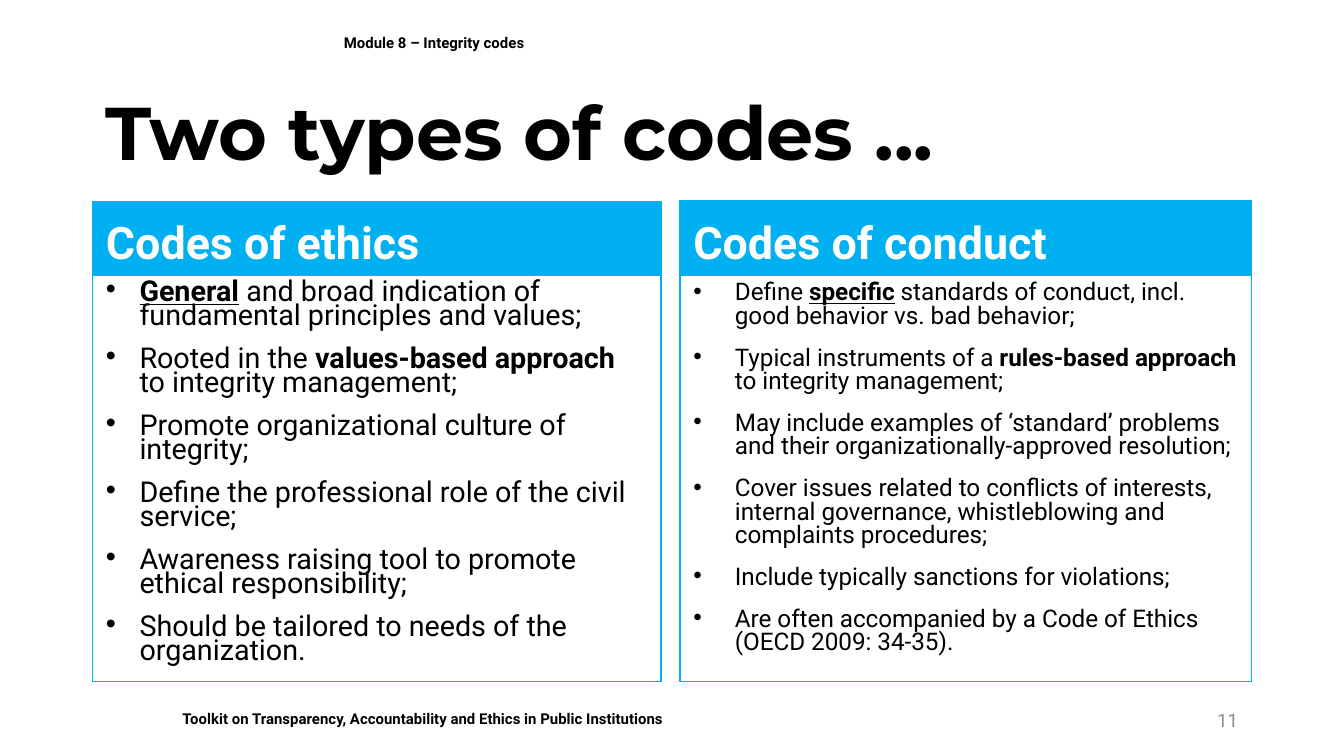
from lxml import etree
from pptx import Presentation
from pptx.dml.color import RGBColor
from pptx.enum.shapes import MSO_SHAPE
from pptx.enum.text import MSO_ANCHOR, PP_ALIGN
from pptx.oxml.ns import qn
from pptx.util import Inches, Pt

RECTANGLE = MSO_SHAPE.RECTANGLE
TOP, MIDDLE, BOTTOM = MSO_ANCHOR.TOP, MSO_ANCHOR.MIDDLE, MSO_ANCHOR.BOTTOM
LEFT, RIGHT = PP_ALIGN.LEFT, PP_ALIGN.RIGHT

THEME = {
    "black": RGBColor(0x00, 0x00, 0x00),
    "white": RGBColor(0xFF, 0xFF, 0xFF),
    "blue": RGBColor(0x00, 0xB0, 0xF0),
    "gray": RGBColor(0x8C, 0x8C, 0x8C),
    "title_font": "Montserrat",
    "body_font": "Roboto",
    "title_size": 40,
    "heading_size": 24,
    "ethics_size": 15.4,
    "conduct_size": 13,
    "number_size": 10,
    "small_size": 8,
    "line_width": 0.75,
}

# Content: a run is (text, style), where style holds "b" for bold, "u" for underline
MODULE = "Module 8 – Integrity codes"
TITLE = "Two types of codes ..."
FOOTER = "Toolkit on Transparency, Accountability and Ethics in Public Institutions"
SLIDE_NUMBER = "11"
COLUMNS = [
    {
        "heading": "Codes of ethics",
        "left": 0.69, "top": 1.5, "width": 4.23, "right_inset": 0.12,
        "size": "ethics_size", "line_spacing": 0.7, "indent": 0.25,
        "bullets": [
            [("General", "bu"),
             (" and broad indication of fundamental principles and values;", "")],
            [("Rooted in the ", ""), ("values-based approach ", "b"),
             ("to integrity management;", "")],
            [("Promote organizational culture of integrity;", "")],
            [("Define the professional role of the civil service;", "")],
            [("Awareness raising tool to promote ethical responsibility;", "")],
            [("Should be tailored to needs of the organization.", "")],
        ],
    },
    {
        "heading": "Codes of conduct",
        "left": 5.06, "top": 1.49, "width": 4.25, "right_inset": 0.1,
        "size": "conduct_size", "line_spacing": 0.8, "indent": 0.31,
        "bullets": [
            [("Define ", ""), ("specific", "bu"),
             (" standards of conduct, incl. good behavior vs. bad behavior;", "")],
            [("Typical instruments of a ", ""), ("rules-based approach ", "b"),
             ("to integrity management;", "")],
            [("May include examples of ‘standard’ problems and their "
              "organizationally-approved resolution;", "")],
            [("Cover issues related to conflicts of interests, internal governance, "
              "whistleblowing and complaints procedures;", "")],
            [("Include typically sanctions for violations;", "")],
            [("Are often accompanied by a Code of Ethics (OECD 2009: 34-35).", "")],
        ],
    },
]
BODY_TOP, BODY_HEIGHT = 2.05, 3.02
BULLET_GAP = 10


def add_run(paragraph, text, size, color, style="", font="body_font"):
    run = paragraph.add_run()
    run.text = text
    run.font.name = THEME[font]
    run.font.size = Pt(THEME[size])
    run.font.color.rgb = THEME[color]
    run.font.bold = "b" in style
    run.font.underline = "u" in style


def prepare_frame(shape, anchor):
    frame = shape.text_frame
    frame.word_wrap = True
    frame.vertical_anchor = anchor
    return frame


def add_label(slide, box, text, size, color="black", style="b",
              font="body_font", anchor=MIDDLE, align=LEFT, line_spacing=1.0):
    shape = slide.shapes.add_textbox(*map(Inches, box))
    paragraph = prepare_frame(shape, anchor).paragraphs[0]
    paragraph.alignment = align
    paragraph.line_spacing = line_spacing
    add_run(paragraph, text, size, color, style, font)


def add_panel(slide, box, anchor, fill=None):
    shape = slide.shapes.add_shape(RECTANGLE, *map(Inches, box))
    shape.shadow.inherit = False
    if fill:
        shape.fill.solid()
        shape.fill.fore_color.rgb = THEME[fill]
    else:
        shape.fill.background()
    shape.line.color.rgb = THEME["blue"]
    shape.line.width = Pt(THEME["line_width"])
    return prepare_frame(shape, anchor)


def set_bullet(paragraph, indent):
    properties = paragraph._p.get_or_add_pPr()
    properties.set("marL", str(Inches(indent)))
    properties.set("indent", str(-Inches(indent)))
    etree.SubElement(properties, qn("a:buFont")).set("typeface", "Arial")
    etree.SubElement(properties, qn("a:buChar")).set("char", "•")


def add_column(slide, column):
    left, top, width = column["left"], column["top"], column["width"]

    # Heading band
    frame = add_panel(slide, (left, top, width, BODY_TOP - top), BOTTOM, "blue")
    paragraph = frame.paragraphs[0]
    paragraph.alignment = LEFT
    paragraph.line_spacing = 0.9
    add_run(paragraph, column["heading"], "heading_size", "white", "b")

    # Bulleted body
    frame = add_panel(slide, (left, BODY_TOP, width, BODY_HEIGHT), TOP)
    frame.margin_right = Inches(column["right_inset"])
    for index, runs in enumerate(column["bullets"]):
        paragraph = frame.add_paragraph() if index else frame.paragraphs[0]
        paragraph.alignment = LEFT
        paragraph.line_spacing = column["line_spacing"]
        paragraph.space_before = Pt(BULLET_GAP if index else 0)
        set_bullet(paragraph, column["indent"])
        for text, style in runs:
            add_run(paragraph, text, column["size"], "black", style)


def main():
    presentation = Presentation()
    presentation.slide_width = Inches(10)
    presentation.slide_height = presentation.slide_width * 9 // 16
    slide = presentation.slides.add_slide(presentation.slide_layouts[6])

    # Footer, columns, slide number, module line and title
    add_label(slide, (1.26, 5.23, 7.17, 0.24), FOOTER, "small_size", anchor=TOP)
    for column in COLUMNS:
        add_column(slide, column)
    add_label(slide, (7.06, 5.21, 2.25, 0.3), SLIDE_NUMBER, "number_size",
              color="gray", style="", align=RIGHT)
    add_label(slide, (2.46, 0.1, 6.85, 0.44), MODULE, "small_size")
    add_label(slide, (0.69, 0.64, 8.62, 0.75), TITLE, "title_size",
              font="title_font", line_spacing=0.9)

    presentation.save("out.pptx")


if __name__ == "__main__":
    main()
